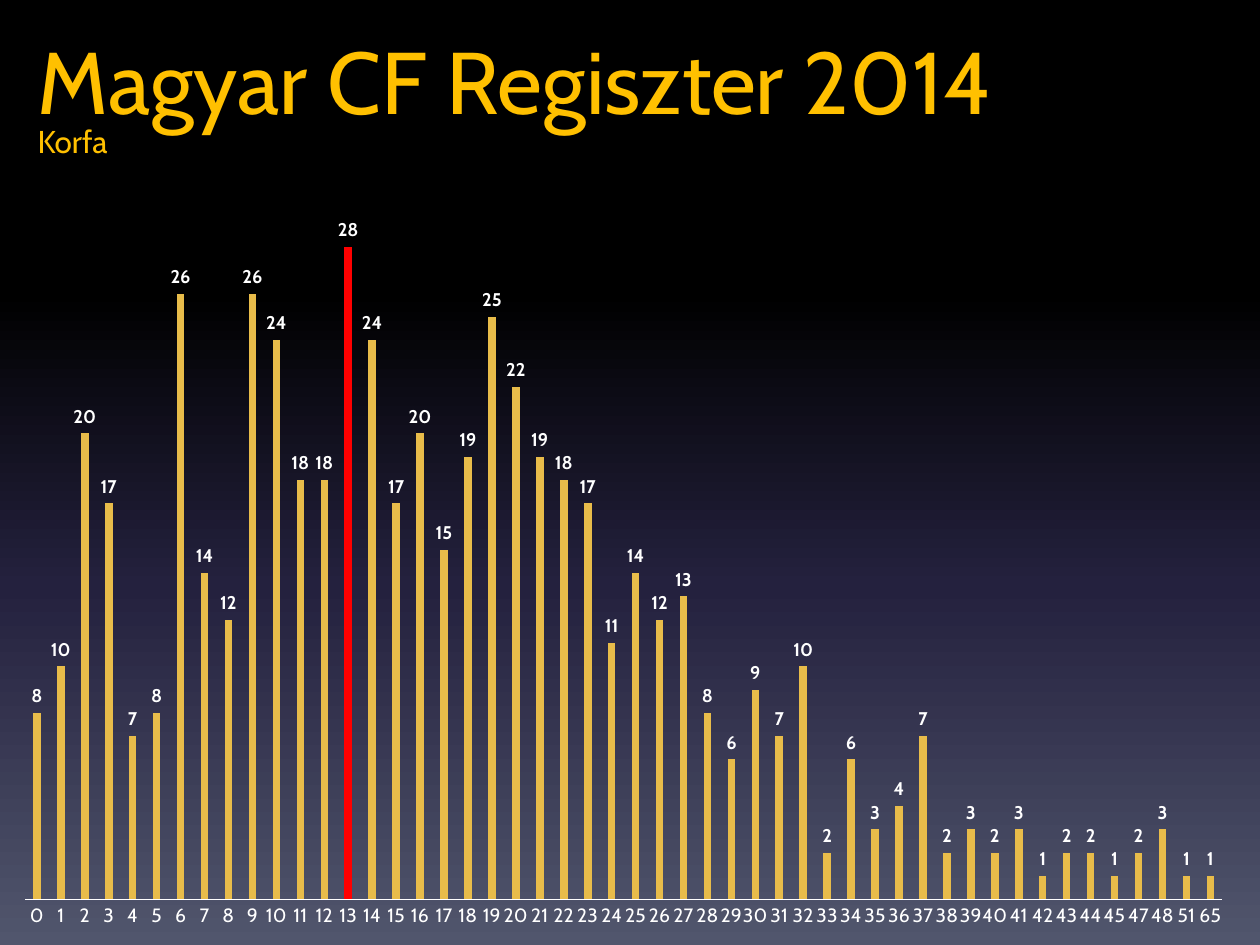
from lxml.etree import SubElement
from pptx import Presentation
from pptx.chart.data import CategoryChartData
from pptx.dml.color import RGBColor
from pptx.enum.chart import XL_CHART_TYPE, XL_LABEL_POSITION, XL_TICK_MARK
from pptx.enum.text import MSO_ANCHOR
from pptx.oxml.ns import qn
from pptx.util import Inches, Pt

FACE = "Cabin"
GOLD, BAR, PEAK, WHITE = "FFC000", "E8BC4A", "FF0000", "FFFFFF"
SKY = [(0, "000000"), (31, "000000"), (62, "24213E"), (100, "51566D")]

AGES = [*range(46), 47, 48, 51, 65]
COUNTS = [8, 10, 20, 17, 7, 8, 26, 14, 12, 26,
          24, 18, 18, 28, 24, 17, 20, 15, 19, 25,
          22, 19, 18, 17, 11, 14, 12, 13, 8, 6,
          9, 7, 10, 2, 6, 3, 4, 7, 2, 3,
          2, 3, 1, 2, 2, 1, 2, 3, 1, 1]


def tint(code):
    return RGBColor.from_string(code)


class Deck:
    """Holds the style and the current slide; boxes are shares of its size."""

    def __init__(self, wide, high):
        self.prs = Presentation()
        self.prs.slide_width = Inches(wide)
        self.prs.slide_height = Inches(high)
        self.slide = self.prs.slides.add_slide(self.prs.slide_layouts[6])

    def place(self, x, y, w, h):
        wide, high = self.prs.slide_width, self.prs.slide_height
        return int(x * wide), int(y * high), int(w * wide), int(h * high)

    def style(self, font, size, color, bold=False):
        font.name, font.size, font.bold = FACE, Pt(size), bold
        font.color.rgb = tint(color)

    def backdrop(self, stops):
        fill = self.slide.background.fill
        fill.gradient()
        fill.gradient_angle = 270
        ramp = next(self.slide.element.iter(qn("a:gsLst")))
        for old in list(ramp):
            ramp.remove(old)
        for share, color in stops:
            stop = SubElement(ramp, qn("a:gs"), pos=str(share * 1000))
            SubElement(stop, qn("a:srgbClr"), val=color)

    def text(self, words, box, size, color, wrap=True, anchor=MSO_ANCHOR.TOP):
        frame = self.slide.shapes.add_textbox(*self.place(*box)).text_frame
        frame.text = words
        frame.word_wrap = wrap
        frame.vertical_anchor = anchor
        self.style(frame.paragraphs[0].runs[0].font, size, color)

    def columns(self, cats, vals, box, area):
        data = CategoryChartData()
        data.categories = [str(cat) for cat in cats]
        data.add_series("Series 1", vals)
        chart = self.slide.shapes.add_chart(
            XL_CHART_TYPE.COLUMN_CLUSTERED, *self.place(*box), data).chart
        chart.has_legend = chart.has_title = False
        self.style(chart.font, 10, WHITE)

        # Axes
        axis = chart.category_axis
        axis.major_tick_mark = axis.minor_tick_mark = XL_TICK_MARK.NONE
        axis.format.line.color.rgb = tint(WHITE)
        axis.format.line.width = Pt(0.75)
        self.style(axis.tick_labels.font, 11, WHITE)
        scale = chart.value_axis
        scale.minimum_scale, scale.maximum_scale = 0, 30
        scale.has_major_gridlines = False
        scale.visible = False

        # Bars, with the highest one picked out
        plot = chart.plots[0]
        plot.gap_width, plot.overlap = 219, -27
        plot.vary_by_categories = False
        bars = plot.series[0]
        top = bars.points[vals.index(max(vals))]
        for part, color in ((bars, BAR), (top, PEAK)):
            part.format.fill.solid()
            part.format.fill.fore_color.rgb = tint(color)

        # Values above the bars
        labels = bars.data_labels
        labels.show_value = True
        labels.position = XL_LABEL_POSITION.OUTSIDE_END
        self.style(labels.font, 10.5, WHITE, bold=True)
        self.inset(plot, area)

    def inset(self, plot, area):
        """Fix the inner plot area as shares of the chart."""
        room = next(plot._element.iterancestors(qn("c:plotArea")))
        for old in room.findall(qn("c:layout")):
            room.remove(old)
        layout = room.makeelement(qn("c:layout"))
        room.insert(0, layout)
        manual = SubElement(layout, qn("c:manualLayout"))
        rules = [("layoutTarget", "inner"), ("xMode", "edge"), ("yMode", "edge"),
                 *zip("xywh", area)]
        for name, val in rules:
            SubElement(manual, qn("c:" + name), val=str(val))


def main():
    deck = Deck(10, 7.5)
    deck.backdrop(SKY)

    # Heading
    deck.text("Korfa", (0.02, 0.92 / 7.5, 0.08, 0.4 / 7.5), 18, GOLD, wrap=False)
    deck.text("Magyar CF Regiszter 2014", (0.02, 0.13 / 7.5, 0.9, 1 / 7.5),
              50, GOLD, anchor=MSO_ANCHOR.MIDDLE)

    # Patients by age
    deck.columns(AGES, COUNTS, (0, 1.47 / 7.5, 0.99, 6.03 / 7.5),
                 (0.02, 0.02, 0.96, 0.92))

    deck.prs.save("out.pptx")


if __name__ == "__main__":
    main()
